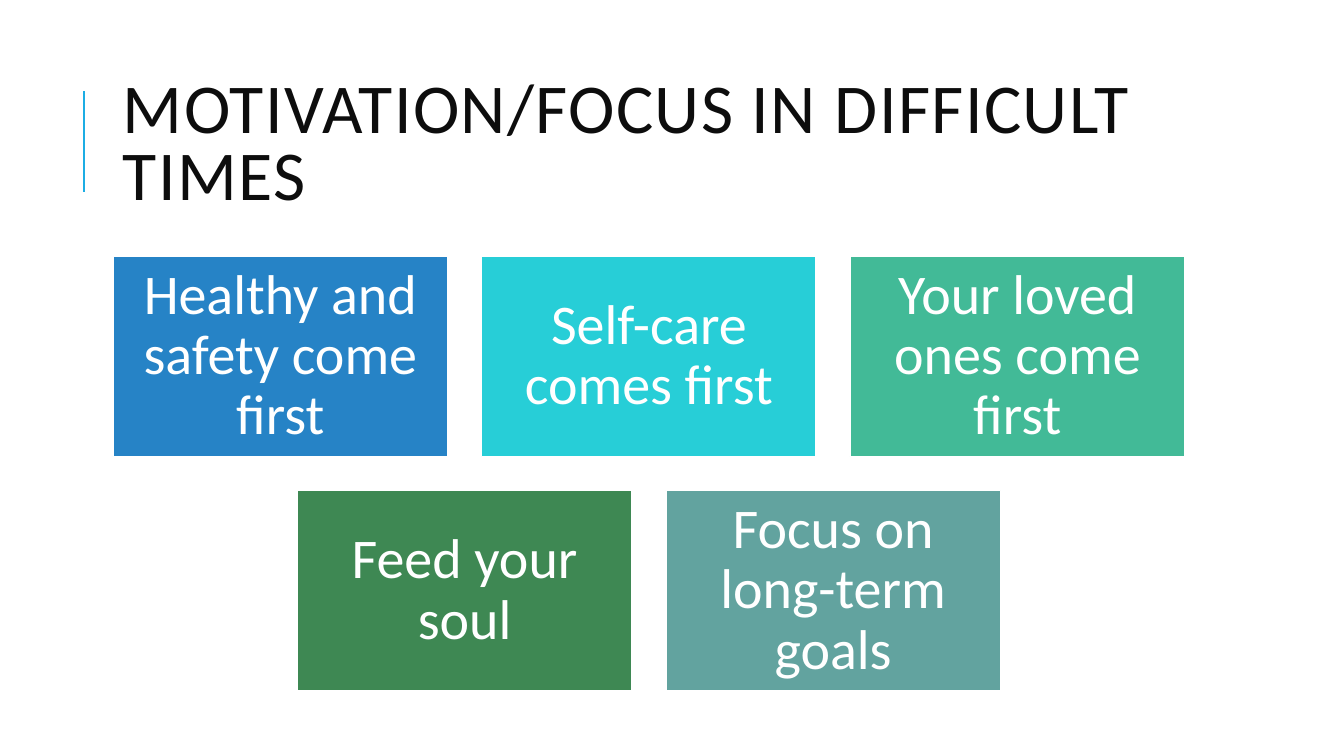
from pptx import Presentation
from pptx import util as u
from pptx.dml.color import RGBColor
from pptx.enum import shapes, text
from pptx.oxml import ns, xmlchemy

COLORS = {
    "accent": "1CADE4",
    "title": "0D0D0D",
    "white": "FFFFFF",
    "blue": "2683C6",
    "cyan": "27CED7",
    "mint": "42BA97",
    "green": "3E8853",
    "teal": "62A39F",
}
FONT = "Calibri"


def color(name):
    return RGBColor.from_string(COLORS[name])


def add_text(frame, words, size, ink, spacing):
    frame.word_wrap = True
    frame.vertical_anchor = text.MSO_ANCHOR.MIDDLE
    para = frame.paragraphs[0]
    para.line_spacing = spacing
    span = para.add_run()
    span.text = words
    span.font.name = FONT
    span.font.size = u.Pt(size)
    span.font.color.rgb = color(ink)
    return para


deck = Presentation()
deck.slide_width = u.Inches(13.33)
deck.slide_height = u.Inches(7.5)
page = deck.slides.add_slide(deck.slide_layouts[6])

# Accent line beside the title
accent = page.shapes.add_connector(
    shapes.MSO_CONNECTOR.STRAIGHT,
    u.Inches(0.83), u.Inches(1.9), u.Inches(0.83), u.Inches(0.9))
accent.line.color.rgb = color("accent")
accent.line.width = u.Pt(1.5)
accent._element.spPr.append(xmlchemy.OxmlElement("a:effectLst"))

# Title, with letters spaced by one point
title = page.shapes.add_textbox(
    u.Inches(1.12), u.Inches(0.64), u.Inches(10.63), u.Inches(1.64))
para = add_text(title.text_frame, "MOTIVATION/FOCUS IN DIFFICULT TIMES",
                50, "title", 0.8)
para.runs[0]._r.find(ns.qn("a:rPr")).set("spc", "100")

# Rows of boxes, each centred on the same axis
ROWS = [
    [("Healthy and safety come first", "blue"),
     ("Self-care comes first", "cyan"),
     ("Your loved ones come first", "mint")],
    [("Feed your soul", "green"),
     ("Focus on long-term goals", "teal")],
]
WIDTH, HEIGHT = 3.32, 1.99
GAP = 0.335
CENTER, TOP = 6.435, 2.54
INSET = u.Inches(0.17)

for row_number, row in enumerate(ROWS):
    row_width = len(row) * WIDTH + (len(row) - 1) * GAP
    top = TOP + row_number * (HEIGHT + GAP)
    for column, (words, fill) in enumerate(row):
        left = CENTER - row_width / 2 + column * (WIDTH + GAP)
        box = page.shapes.add_shape(
            shapes.MSO_SHAPE.RECTANGLE,
            u.Inches(left), u.Inches(top), u.Inches(WIDTH), u.Inches(HEIGHT))
        box.shadow.inherit = False
        box.fill.solid()
        box.fill.fore_color.rgb = color(fill)
        box.line.color.rgb = color("white")
        box.line.width = u.Pt(1.25)
        frame = box.text_frame
        frame.margin_left = frame.margin_right = INSET
        frame.margin_top = frame.margin_bottom = INSET
        para = add_text(frame, words, 40, "white", 0.9)
        para.alignment = text.PP_ALIGN.CENTER

deck.save("out.pptx")
